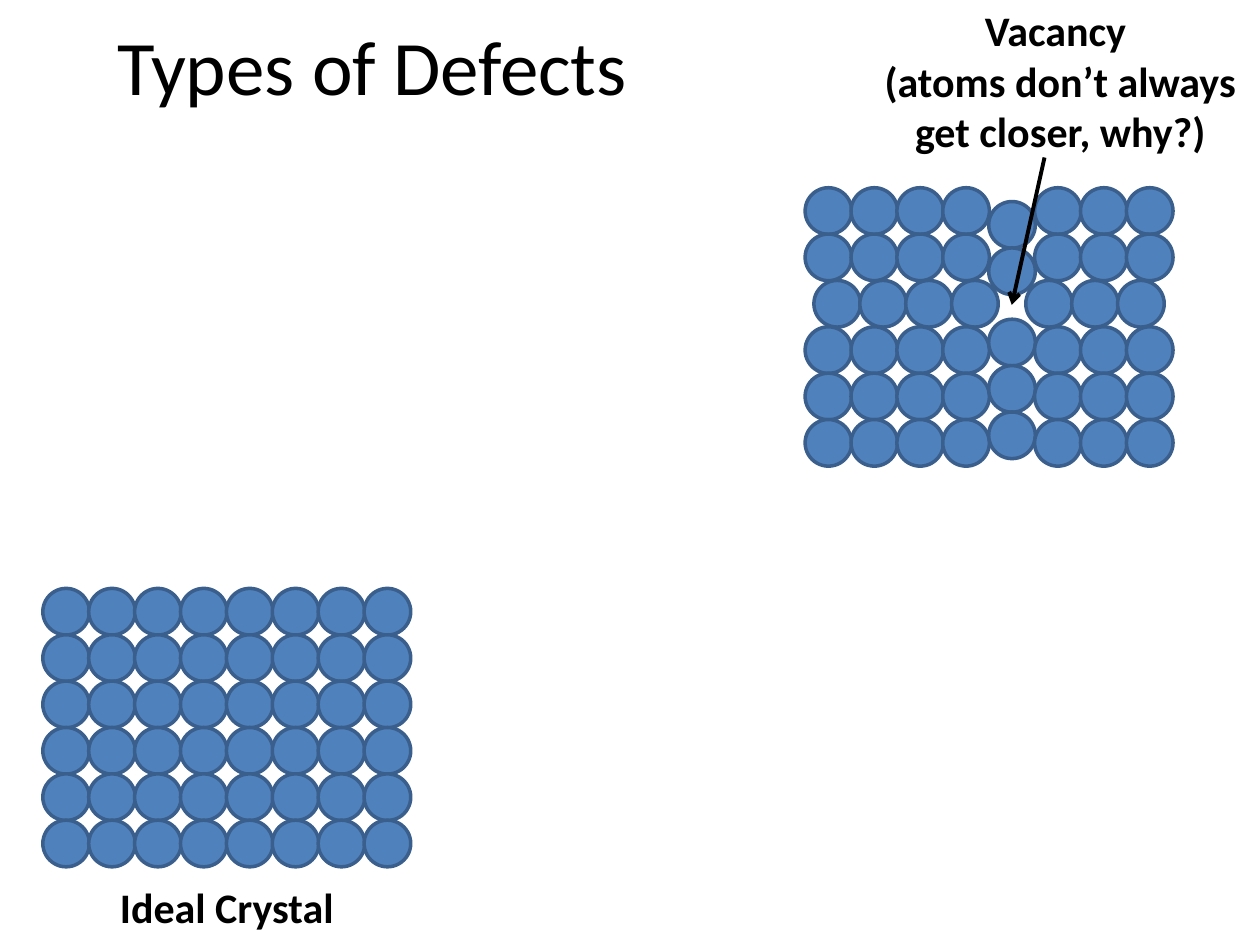
from itertools import product

from lxml.etree import SubElement
from pptx import Presentation
from pptx.dml.color import RGBColor
from pptx.enum.shapes import MSO_CONNECTOR, MSO_SHAPE
from pptx.enum.text import MSO_ANCHOR, MSO_AUTO_SIZE, PP_ALIGN
from pptx.oxml.ns import qn
from pptx.util import Inches, Pt

THEME = {
    "font": "Calibri",
    "ink": RGBColor(0x00, 0x00, 0x00),
    "atom": RGBColor(0x4F, 0x81, 0xBD),
    "atom_line": RGBColor(0x3A, 0x5F, 0x8C),
    "title": Pt(44),
    "label": Pt(24),
}
ROWS, COLS = 6, 8
ATOM, WIDTH, HEIGHT = 0.37, 2.55, 1.84
VACANCY_ROW, VACANCY_COL = 2, 4


def write(sp, lines, size, bold, frame):
    tf = sp.text_frame
    tf.text = "\n".join(lines)
    for name, value in frame.items():
        setattr(tf, name, value)
    font = {"name": THEME["font"], "size": size, "bold": bold}
    for p in tf.paragraphs:
        p.alignment = PP_ALIGN.CENTER
        for r in p.runs:
            for name, value in font.items():
                setattr(r.font, name, value)
            r.font.color.rgb = THEME["ink"]


def vacancy_shift(row, col):
    if col == VACANCY_COL:
        return 0, 0.11 if row < VACANCY_ROW else -0.06
    if row == VACANCY_ROW:
        return 0.07 if col < VACANCY_COL else -0.07, 0
    return 0, 0


prs = Presentation()
prs.slide_width, prs.slide_height = Inches(10), Inches(7.5)
s = prs.slides.add_slide(prs.slide_layouts[5])

title = s.shapes.title
box = {"left": 0.49, "top": 0.06, "width": 4.93, "height": 0.9}
for name, value in box.items():
    setattr(title, name, Inches(value))
write(title, ["Types of Defects"], THEME["title"], False,
      {"vertical_anchor": MSO_ANCHOR.MIDDLE})

crystals = [
    {"left": 6.39, "top": 1.49, "vacancy": True, "wrap": True,
     "label": ["Vacancy ", "(atoms don’t always get closer, why?)"],
     "box": (6.9, -0.01, 3.03, 1.31)},
    {"left": 0.34, "top": 4.67, "vacancy": False, "wrap": False,
     "label": ["Ideal Crystal"],
     "box": (0.84, 6.95, 1.92, 0.5)},
]

for crystal in crystals:
    group = s.shapes.add_group_shape()
    for row, col in product(range(ROWS), range(COLS)):
        dx, dy = 0, 0
        if crystal["vacancy"]:
            if (row, col) == (VACANCY_ROW, VACANCY_COL):
                continue
            dx, dy = vacancy_shift(row, col)
        x = crystal["left"] + col * WIDTH / (COLS - 1) + dx
        y = crystal["top"] + row * HEIGHT / (ROWS - 1) + dy
        atom = group.shapes.add_shape(MSO_SHAPE.OVAL, Inches(x), Inches(y),
                                      Inches(ATOM), Inches(ATOM))
        atom.shadow.inherit = False
        atom.fill.solid()
        atom.fill.fore_color.rgb = THEME["atom"]
        atom.line.color.rgb = THEME["atom_line"]
        atom.line.width = Pt(2)

    label = group.shapes.add_textbox(*[Inches(v) for v in crystal["box"]])
    write(label, crystal["label"], THEME["label"], True,
          {"word_wrap": crystal["wrap"],
           "auto_size": MSO_AUTO_SIZE.SHAPE_TO_FIT_TEXT})

    if crystal["vacancy"]:
        arrow = group.shapes.add_connector(
            MSO_CONNECTOR.STRAIGHT,
            Inches(8.29), Inches(1.25), Inches(8.03), Inches(2.42))
        arrow.line.color.rgb = THEME["ink"]
        arrow.line.width = Pt(2.25)
        SubElement(arrow.line._get_or_add_ln(), qn("a:tailEnd"), type="arrow")
        SubElement(arrow._element.spPr, qn("a:effectLst"))

prs.save("out.pptx")
